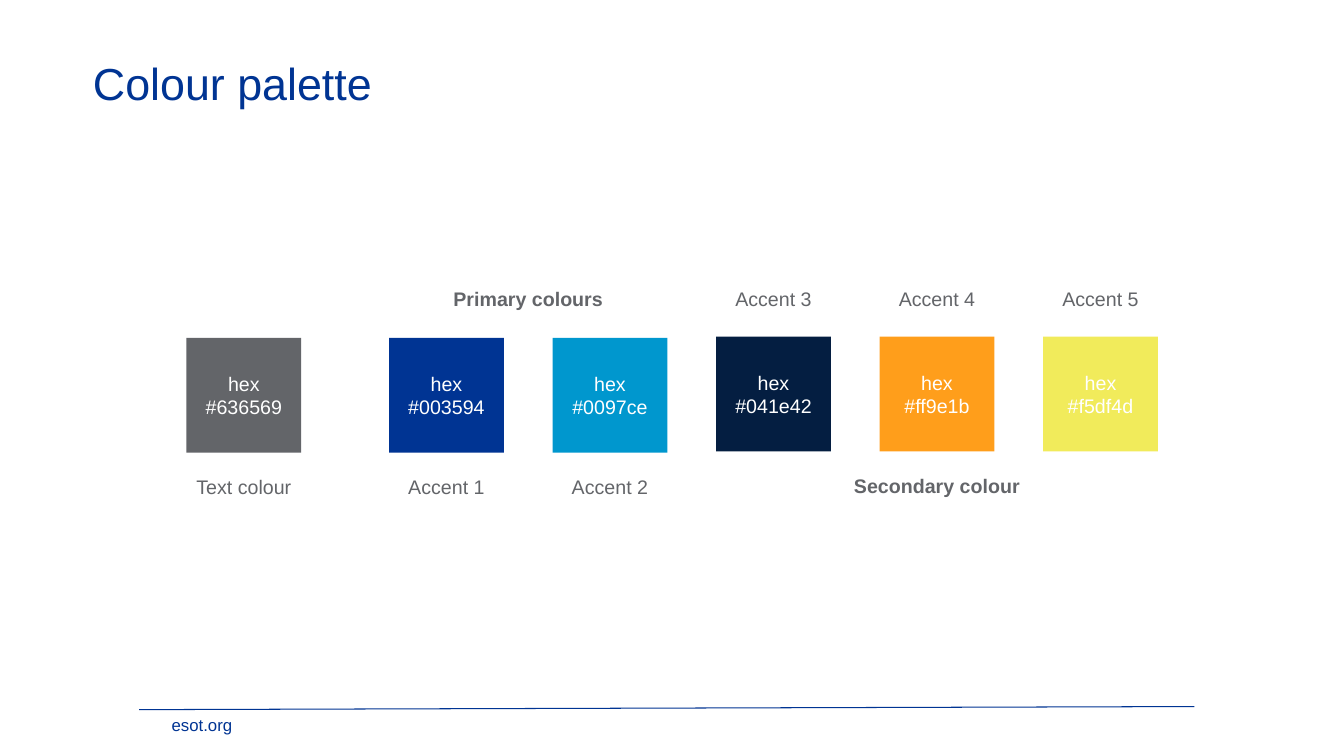
import pptx
import pptx.util
import pptx.dml.color
import pptx.enum.shapes
import pptx.enum.text
import pptx.oxml

Pt = pptx.util.Pt
ALIGN = pptx.enum.text.PP_ALIGN
ANCHOR = pptx.enum.text.MSO_ANCHOR

COLOURS = {
    "text": "636569",
    "accent1": "003493",
    "accent2": "0097CE",
    "accent3": "041E41",
    "accent4": "FF9E1B",
    "accent5": "F1EB5B",
    "white": "FFFFFF",
}

SWATCH = 82
PITCH = 116.8
TEXT_LEFT = 133.2
ACCENT_LEFT = 277.9
PRIMARY_TOP, SECONDARY_TOP = 241.3, 240.5
ABOVE, BELOW = 205.2, 339.1
LABEL_HEIGHT = 24.5


def rgb(name):
    return pptx.dml.color.RGBColor.from_string(COLOURS[name])


def write(s, text, size=14, colour="text", bold=False, align=ALIGN.CENTER,
          anchor=ANCHOR.TOP, margins=(0, 0), spacing=None):
    tf = s.text_frame
    tf.word_wrap = True
    tf.auto_size = pptx.enum.text.MSO_AUTO_SIZE.NONE
    tf.vertical_anchor = anchor
    tf.margin_left = tf.margin_right = Pt(margins[0])
    tf.margin_top = tf.margin_bottom = Pt(margins[1])
    p = tf.paragraphs[0]
    p.alignment = align
    p.line_spacing = spacing
    r = p.add_run()
    r.text = text
    r.font.name = "Arial"
    r.font.size = Pt(size)
    r.font.bold = bold
    r.font.color.rgb = rgb(colour)


def add_label(sp, text, left, top, width=SWATCH, height=LABEL_HEIGHT, **fmt):
    s = sp.add_textbox(Pt(left), Pt(top), Pt(width), Pt(height))
    write(s, text, **fmt)


def add_swatch(sp, code, fill, left, top):
    s = sp.add_shape(pptx.enum.shapes.MSO_SHAPE.RECTANGLE,
                     Pt(left), Pt(top), Pt(SWATCH), Pt(SWATCH))
    s.shadow.inherit = False
    s.fill.solid()
    s.fill.fore_color.rgb = rgb(fill)
    s.line.fill.background()
    write(s, "hex " + code, colour="white", anchor=ANCHOR.MIDDLE,
          margins=(7.2, 3.6))


def add_title(sp, text):
    s = sp.title
    s.left, s.top, s.width, s.height = Pt(66.4), Pt(28.8), Pt(811.4), Pt(65.5)
    write(s, text, size=32, colour="accent1", align=ALIGN.LEFT,
          anchor=ANCHOR.MIDDLE, spacing=0.9)


def add_footer(sp, text):
    s = sp.add_connector(pptx.enum.shapes.MSO_CONNECTOR.STRAIGHT,
                         Pt(99.4), Pt(506.9), Pt(853.2), Pt(504.7))
    s.line.color.rgb = rgb("accent1")
    s.line.width = Pt(0.75)
    s._element.spPr.append(pptx.oxml.parse_xml(
        '<a:effectLst xmlns:a='
        '"http://schemas.openxmlformats.org/drawingml/2006/main"/>'))
    add_label(sp, text, 122.6, 510.5, width=66, height=14, size=12,
              colour="accent1", align=ALIGN.LEFT)


def main():
    prs = pptx.Presentation()
    prs.slide_width, prs.slide_height = Pt(960), Pt(540)
    sp = prs.slides.add_slide(prs.slide_layouts[5]).shapes

    add_footer(sp, "esot.org")
    add_title(sp, "Colour palette")

    # Text colour
    add_swatch(sp, "#636569", "text", TEXT_LEFT, PRIMARY_TOP)
    add_label(sp, "Text colour", TEXT_LEFT, BELOW)

    # Accents: two primary, labelled below, then three secondary, labelled above
    codes = ["#003594", "#0097ce", "#041e42", "#ff9e1b", "#f5df4d"]
    for i, code in enumerate(codes):
        left = ACCENT_LEFT + i * PITCH
        primary = i < 2
        add_swatch(sp, code, f"accent{i + 1}", left,
                   PRIMARY_TOP if primary else SECONDARY_TOP)
        add_label(sp, f"Accent {i + 1}", left, BELOW if primary else ABOVE)

    # Group headings
    add_label(sp, "Primary colours", ACCENT_LEFT, ABOVE,
              width=PITCH + SWATCH, bold=True)
    add_label(sp, "Secondary colour", ACCENT_LEFT + 2 * PITCH, BELOW - 0.7,
              width=2 * PITCH + SWATCH, bold=True)

    prs.save("out.pptx")


if __name__ == "__main__":
    main()
